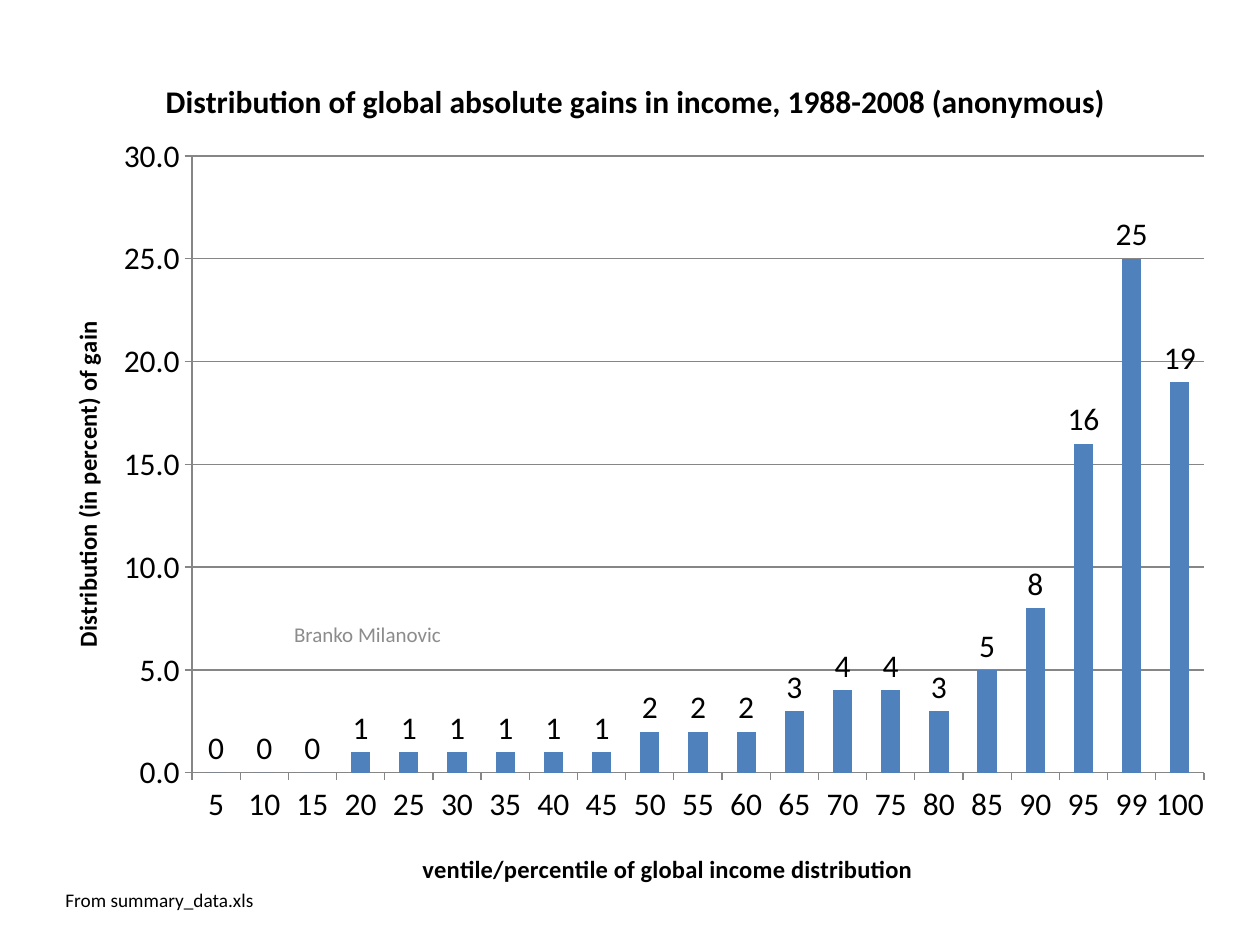
from lxml import etree
from pptx import Presentation
from pptx.chart.data import CategoryChartData
from pptx.dml.color import RGBColor
from pptx.enum.chart import XL_CHART_TYPE as ChartType
from pptx.enum.chart import XL_LABEL_POSITION as LabelPos
from pptx.enum.chart import XL_TICK_MARK as Tick
from pptx.enum.text import MSO_ANCHOR as Anchor
from pptx.enum.text import PP_ALIGN as Align
from pptx.oxml.ns import qn
from pptx.util import Pt

PX = 914400 // 126
FONT = "Calibri"
BLACK = RGBColor(0x00, 0x00, 0x00)
GRAY = RGBColor(0x8C, 0x8C, 0x8C)
AXIS_GRAY = RGBColor(0x86, 0x86, 0x86)
BLUE = RGBColor(0x4F, 0x81, 0xBD)

PERCENTILES = [*range(5, 100, 5), 99, 100]
GAINS = [0, 0, 0, 1, 1, 1, 1, 1, 1, 2, 2, 2, 3, 4, 4, 3, 5, 8, 16, 25, 19]


def px(*lengths):
    return [n * PX for n in lengths]


def set_font(font, size, color=BLACK, bold=False):
    font.name, font.size, font.bold = FONT, Pt(size), bold
    font.color.rgb = color


def add_text(s, box, text, size, color=BLACK, align=Align.LEFT, anchor=Anchor.TOP):
    tf = s.shapes.add_textbox(*px(*box)).text_frame
    tf.word_wrap, tf.vertical_anchor = True, anchor
    p = tf.paragraphs[0]
    p.alignment = align
    r = p.add_run()
    r.text = text
    set_font(r.font, size, color)


def set_layout(parent, index, box, **place):
    """Place a chart part; place holds px relative to the chart box."""
    for old in parent.findall(qn("c:layout")):
        parent.remove(old)
    layout = etree.Element(qn("c:layout"))
    manual = etree.SubElement(layout, qn("c:manualLayout"))
    settings = {"xMode": "edge", "yMode": "edge"}
    if "w" in place:
        settings = {"layoutTarget": "inner", **settings}
    extent = {"x": box[2], "y": box[3], "w": box[2], "h": box[3]}
    settings.update({k: f"{v / extent[k]:.4f}" for k, v in place.items()})
    for tag, val in settings.items():
        etree.SubElement(manual, qn(f"c:{tag}")).set("val", val)
    parent.insert(index, layout)


def set_title(owner, box, text, size, x, y, rotation=0):
    owner.has_title = True
    title = owner.chart_title if hasattr(owner, "chart_title") else owner.axis_title
    tf = title.text_frame
    r = tf.paragraphs[0].add_run()
    r.text = text
    set_font(r.font, size, bold=True)
    body = title.element.find(".//" + qn("a:bodyPr"))
    body.set("rot", str(rotation * 60000))
    body.set("vert", "horz")
    set_layout(title.element, 1, box, x=x, y=y)


def format_axis(axis):
    axis.major_tick_mark, axis.minor_tick_mark = Tick.OUTSIDE, Tick.NONE
    set_font(axis.tick_labels.font, 18)
    axis.format.line.color.rgb = AXIS_GRAY


def add_gains_chart(s, box):
    data = CategoryChartData()
    data.categories = [str(n) for n in PERCENTILES]
    data.add_series("Series 1", GAINS)
    chart = s.shapes.add_chart(ChartType.COLUMN_CLUSTERED, *px(*box), data).chart
    chart.has_legend = False
    set_font(chart.font, 10)

    # Axes and gridlines
    cat, val = chart.category_axis, chart.value_axis
    format_axis(cat)
    format_axis(val)
    val.minimum_scale, val.maximum_scale, val.major_unit = 0, 30, 5
    val.tick_labels.number_format = "0.0"
    val.tick_labels.number_format_is_linked = False
    val.has_major_gridlines = True
    val.major_gridlines.format.line.color.rgb = AXIS_GRAY

    # Titles
    set_title(chart, box, "Distribution of global absolute gains in income, "
              "1988-2008 (anonymous)", 18, x=127, y=35)
    set_title(cat, box, "ventile/percentile of global income distribution", 14,
              x=385, y=809)
    set_title(val, box, "Distribution (in percent) of gain", 14,
              x=33, y=278, rotation=-90)

    # Columns and value labels
    plot = chart.plots[0]
    plot.gap_width, plot.vary_by_categories = 150, False
    series = plot.series[0]
    series.format.fill.solid()
    series.format.fill.fore_color.rgb = BLUE
    plot.has_data_labels = True
    labels = plot.data_labels
    labels.show_value, labels.position = True, LabelPos.OUTSIDE_END
    labels.number_format, labels.number_format_is_linked = "#,##0", False
    set_font(labels.font, 18)
    plot_area = chart.element.find(".//" + qn("c:plotArea"))
    set_layout(plot_area, 0, box, x=159, y=117, w=1012, h=617)


def main():
    prs = Presentation()
    prs.slide_width, prs.slide_height = px(1260, 945)
    s = prs.slides.add_slide(prs.slide_layouts[6])
    add_text(s, (53, 882, 388, 37), "From summary_data.xls", 11)
    add_text(s, (168, 609, 399, 50), "Branko Milanovic", 12, GRAY,
             Align.CENTER, Anchor.MIDDLE)
    add_gains_chart(s, (33, 39, 1194, 868))
    prs.save("out.pptx")


if __name__ == "__main__":
    main()
